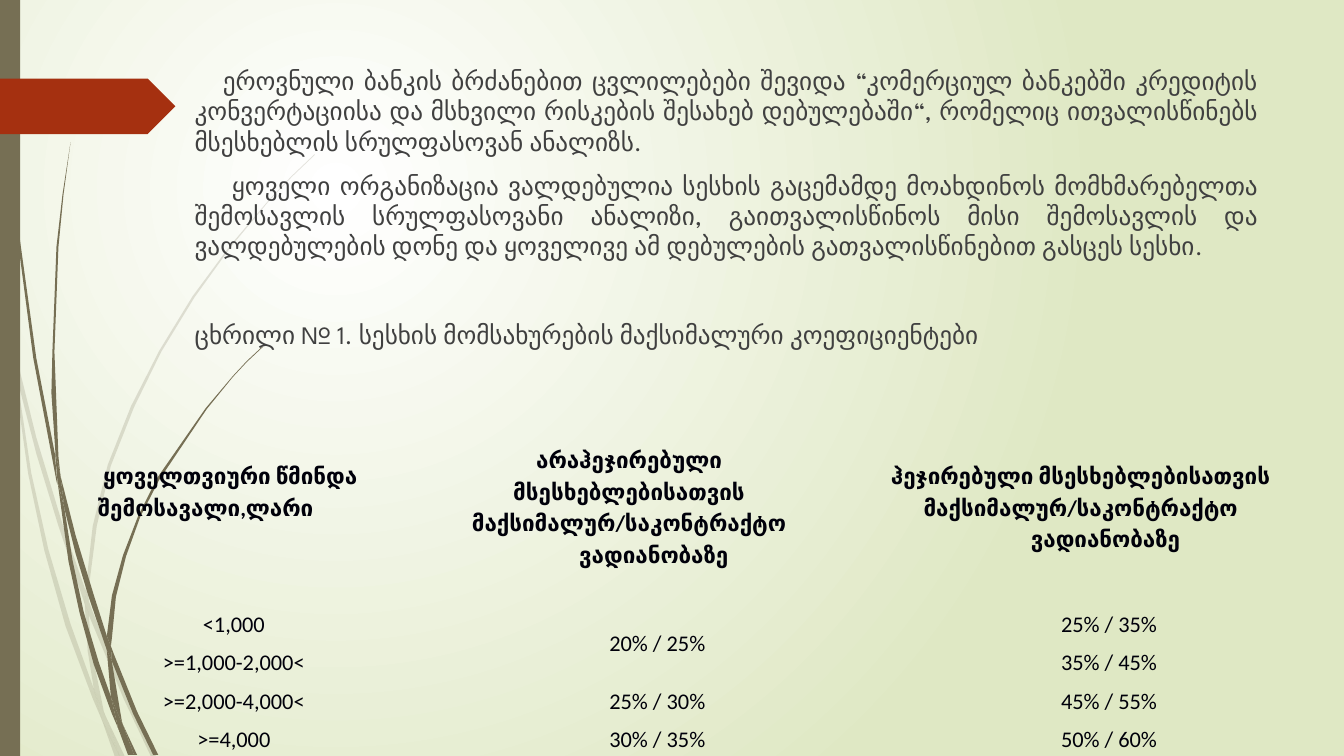
from lxml import etree
from pptx import Presentation
from pptx.dml.color import RGBColor
from pptx.enum.shapes import MSO_SHAPE
from pptx.enum.text import MSO_ANCHOR, PP_ALIGN
from pptx.oxml.ns import qn
from pptx.util import Inches, Pt

CENTER, JUSTIFY = PP_ALIGN.CENTER, PP_ALIGN.JUSTIFY
TOP, MIDDLE = MSO_ANCHOR.TOP, MSO_ANCHOR.MIDDLE
RECT, PENTAGON = MSO_SHAPE.RECTANGLE, MSO_SHAPE.PENTAGON

# Content: body paragraphs as (text, first-line indent in, space before pt)
BODY = [
    ("ეროვნული ბანკის ბრძანებით ცვლილებები შევიდა “კომერციულ ბანკებში კრედიტის "
     "კონვერტაციისა და მსხვილი რისკების შესახებ დებულებაში“, რომელიც "
     "ითვალისწინებს მსესხებლის სრულფასოვან ანალიზს.", 0.28, 10),
    ("ყოველი ორგანიზაცია ვალდებულია სესხის გაცემამდე მოახდინოს მომხმარებელთა "
     "შემოსავლის სრულფასოვანი ანალიზი, გაითვალისწინოს მისი შემოსავლის და "
     "ვალდებულების დონე და ყოველივე ამ დებულების გათვალისწინებით გასცეს სესხი.",
     0.37, 10),
    ("ცხრილი № 1. სესხის მომსახურების მაქსიმალური კოეფიციენტები", 0, 42),
]

# Header cells: paragraphs as (lines, first-line indent in)
INDENT, VALUE_INDENT = 0.49, 0.56
HEADER = [
    [(["ყოველთვიური წმინდა შემოსავალი,ლარი"], INDENT)],
    [(["არაჰეჯირებული მსესხებლებისათვის", "მაქსიმალურ/საკონტრაქტო"], 0),
     (["ვადიანობაზე"], INDENT)],
    [(["ჰეჯირებული მსესხებლებისათვის", "მაქსიმალურ/საკონტრაქტო"], 0),
     (["ვადიანობაზე"], INDENT)],
]
ROWS = [  # None continues the cell above
    ("<1,000", "20% / 25%", "25% / 35%"),
    (">=1,000-2,000<", None, "35% / 45%"),
    (">=2,000-4,000<", "25% / 30%", "45% / 55%"),
    (">=4,000", "30% / 35%", "50% / 60%"),
]
COL_WIDTHS = (3.92, 4.48, 4.48)
HEADER_HEIGHT, ROW_HEIGHT = 2.24, 0.38

# Grass: corner points of each blade
PALE_GRASS = [
    [(.11, 3.5), (.09, 3.22), (0, 2.82), (0, 2.99), (.1, 3.44)],
    [(.58, 5.22), (.84, 5.99), (.85, 5.86), (.62, 5.2), (.36, 4.34), (.14, 3.45),
     (.17, 3.76), (.36, 4.5)],
    [(.92, 6.07), (.88, 5.96), (.88, 6.1), (1.23, 6.94), (1.5, 7.51), (1.55, 7.51),
     (1.27, 6.92)],
    [(1.19, 7.51), (1.24, 7.51), (1.05, 7.11)],
    [(.93, 6.83), (.7, 6.19), (.48, 5.45), (.31, 4.69), (.17, 3.76), (.11, 3.5),
     (.28, 4.7), (.44, 5.46), (.65, 6.21), (.92, 6.93), (1.01, 7.14), (.99, 7.07)],
    [(.84, 5.99), (.87, 6.46), (.93, 6.83), (.96, 6.92), (1.05, 7.11), (1.03, 7.06),
     (.91, 6.46), (.88, 6.1), (.88, 6.08)],
    [(.88, 5.84), (.96, 5.22), (1.1, 4.62), (1.33, 4.04), (1.6, 3.49), (1.93, 2.95),
     (2.29, 2.45), (2.68, 1.98), (2.9, 1.75), (3.12, 1.54), (3.12, 1.53),
     (2.89, 1.75), (2.68, 1.97), (2.28, 2.44), (1.91, 2.94), (1.58, 3.48),
     (1.3, 4.03), (1.07, 4.61), (.92, 5.22), (.85, 5.84), (.85, 5.86), (.88, 5.96)],
    [(1.01, 7.14), (1.14, 7.51), (1.19, 7.51)],
    [(.88, 6.08), (.88, 6.1), (.88, 5.96), (.85, 5.86), (.84, 5.99)],
    [(.96, 6.92), (.93, 6.83), (.99, 7.07), (1.01, 7.14), (1.19, 7.51), (1.05, 7.11)],
]
DARK_GRASS = [
    [(.07, 1.1), (.17, 2.33), (.33, 3.55), (.56, 4.77), (.57, 4.81), (.55, 4.57),
     (.55, 4.53), (.36, 3.55), (.19, 2.32), (.08, 1.09), (.05, .48), (.04, 0),
     (.03, 0), (.04, .48)],
    [(.88, 5.92), (1.06, 6.45), (1.06, 6.33), (1.06, 6.31), (.93, 5.9), (.75, 5.31),
     (.6, 4.72), (.64, 5.05), (.75, 5.49)],
    [(1.13, 6.49), (1.1, 6.41), (1.11, 6.56), (1.32, 7.08), (1.52, 7.49),
     (1.57, 7.49), (1.36, 7.06)],
    [(1.1, 6.91), (.98, 6.57), (.83, 6.07), (.72, 5.56), (.64, 5.05), (.57, 4.77),
     (.68, 5.57), (.79, 6.08), (.93, 6.59), (1.11, 7.08), (1.17, 7.22), (1.16, 7.17)],
    [(.6, 4.72), (.58, 4.53), (.54, 3.49), (.58, 2.45), (.63, 1.93), (.7, 1.41),
     (.62, 1.93), (.56, 2.45), (.52, 3.49), (.51, 3.9), (.55, 4.49)],
    [(1.33, 7.49), (1.36, 7.49), (1.22, 7.19)],
    [(.57, 4.77), (.64, 5.05), (.6, 4.72), (.55, 4.49), (.55, 4.53)],
    [(1.11, 6.33), (1.15, 5.92), (1.25, 5.52), (1.39, 5.13), (1.58, 4.76),
     (2.05, 4.06), (2.31, 3.74), (2.45, 3.59), (2.61, 3.44), (2.6, 3.44),
     (2.45, 3.58), (2.31, 3.73), (2.04, 4.05), (1.56, 4.74), (1.37, 5.12),
     (1.22, 5.51), (1.11, 5.91), (1.06, 6.31), (1.1, 6.41)],
    [(1.17, 7.22), (1.27, 7.49), (1.31, 7.49)],
    [(1.06, 6.45), (1.1, 6.91), (1.16, 7.06), (1.22, 7.19), (1.21, 7.16),
     (1.11, 6.56), (1.09, 6.51)],
    [(1.06, 6.45), (1.09, 6.51), (1.11, 6.56), (1.1, 6.41), (1.06, 6.31)],
    [(1.16, 7.06), (1.1, 6.91), (1.16, 7.17), (1.17, 7.22), (1.3, 7.49),
     (1.33, 7.49), (1.22, 7.19)],
]


class Theme:
    white = RGBColor(0xFF, 0xFF, 0xFF)
    green = RGBColor(0xDF, 0xE8, 0xC4)
    olive = RGBColor(0x76, 0x6F, 0x54)
    red = RGBColor(0xA5, 0x30, 0x10)
    body = RGBColor(0x40, 0x40, 0x40)
    cell = RGBColor(0x00, 0x00, 0x0A)
    body_font, cell_font = "League Spartan", "Calibri"
    body_size, cell_size = Pt(18), Pt(16)


def paint(shape, color, alpha=None):
    shape.shadow.inherit = False
    shape.fill.solid()
    shape.fill.fore_color.rgb = color
    shape.line.fill.background()
    if alpha:
        clr = shape.fill._xPr.find(".//" + qn("a:srgbClr"))
        etree.SubElement(clr, qn("a:alpha"), val=str(alpha * 1000))


def add_blade(s, corners, alpha=None):
    points = [(Inches(x), Inches(y)) for x, y in corners]
    builder = s.shapes.build_freeform(*points[0])
    builder.add_line_segments(points[1:], close=True)
    paint(builder.convert_to_shape(), Theme.olive, alpha)


def add_run(p, text, font, size, color, bold=False):
    r = p.add_run()
    r.text = text
    r.font.name, r.font.size, r.font.bold = font, size, bold
    r.font.color.rgb = color


def next_paragraph(tf, i):
    return tf.add_paragraph() if i else tf.paragraphs[0]


def fill_cell(cell, paragraphs, bold=False):
    cell.fill.background()
    cell.vertical_anchor = MIDDLE
    cell.margin_left = cell.margin_right = Inches(0.01)
    cell.margin_top = cell.margin_bottom = Inches(0.01)
    for i, (lines, indent) in enumerate(paragraphs):
        p = next_paragraph(cell.text_frame, i)
        p.alignment, p.line_spacing = CENTER, 1.15
        pPr = p._p.get_or_add_pPr()
        pPr.set("marR", str(Inches(0.4)))
        pPr.set("indent", str(Inches(indent)))
        for j, line in enumerate(lines):
            if j:
                p.add_line_break()
            add_run(p, line, Theme.cell_font, Theme.cell_size, Theme.cell, bold)


prs = Presentation()
prs.slide_width, prs.slide_height = Inches(13.33), Inches(7.5)
s = prs.slides.add_slide(prs.slide_layouts[1])
title, body = s.placeholders
title._element.getparent().remove(title._element)

# Background: circular gradient
fill = s.background.fill
fill.gradient()
for stop, color, position in zip(fill.gradient_stops, (Theme.white, Theme.green), (0, 1)):
    stop.color.rgb, stop.position = color, position
grad = s._element.find(".//" + qn("a:gradFill"))
grad.remove(grad.find(qn("a:lin")))
circle = etree.SubElement(grad, qn("a:path"), {"path": "circle"})
etree.SubElement(circle, qn("a:fillToRect"), l="50000", t="50000", r="100000", b="100000")

# Decoration: grass, side bar and arrow tab
for corners in PALE_GRASS:
    add_blade(s, corners, 20)
for corners in DARK_GRASS:
    add_blade(s, corners)
bar = s.shapes.add_shape(RECT, 0, 0, Inches(0.2), prs.slide_height)
paint(bar, Theme.olive)
tab = s.shapes.add_shape(PENTAGON, 0, Inches(0.78), Inches(1.74), Inches(0.55))
paint(tab, Theme.red)

# Body text, in front of the decoration
s.shapes._spTree.append(body._element)
body.left, body.top, body.width, body.height = map(Inches, (1.83, 0.6, 10.75, 6.48))
tf = body.text_frame
tf.word_wrap, tf.vertical_anchor = True, TOP
for i, (text, indent, before) in enumerate(BODY):
    p = next_paragraph(tf, i)
    p.alignment, p.space_before = JUSTIFY, Pt(before)
    pPr = p._p.get_or_add_pPr()
    pPr.set("marL", "0")
    pPr.set("indent", str(Inches(indent)))
    etree.SubElement(pPr, qn("a:buNone"))
    add_run(p, text, Theme.body_font, Theme.body_size, Theme.body)

# Table of maximum ratios, without style or grid
height = HEADER_HEIGHT + ROW_HEIGHT * len(ROWS)
table = s.shapes.add_table(len(ROWS) + 1, len(COL_WIDTHS), Inches(0.28), Inches(3.75),
                           Inches(sum(COL_WIDTHS)), Inches(height)).table
table.first_row = table.horz_banding = False
table._tbl.tblPr.find(qn("a:tableStyleId")).text = "{2D5ABB26-0587-4C30-8999-92F81FD0307C}"
for column, width in zip(table.columns, COL_WIDTHS):
    column.width = Inches(width)
for i, row in enumerate(table.rows):
    row.height = Inches(ROW_HEIGHT if i else HEADER_HEIGHT)
for c, paragraphs in enumerate(HEADER):
    fill_cell(table.cell(0, c), paragraphs, bold=True)
    if c:
        table.cell(0, c).margin_top = Inches(0.32)
for i, values in enumerate(ROWS, 1):
    for c, value in enumerate(values):
        if value is None:
            table.cell(i - 1, c).merge(table.cell(i, c))
        else:
            fill_cell(table.cell(i, c), [([value], VALUE_INDENT)])

prs.save("out.pptx")
